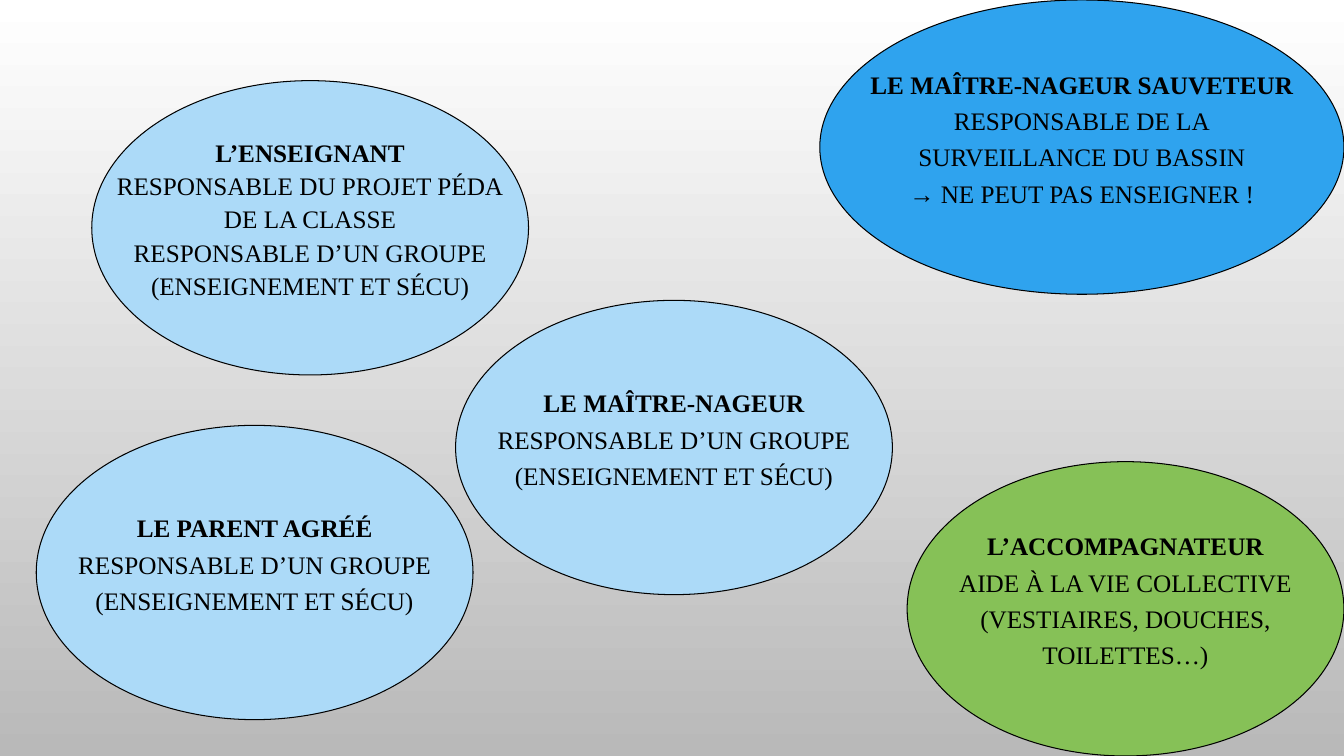
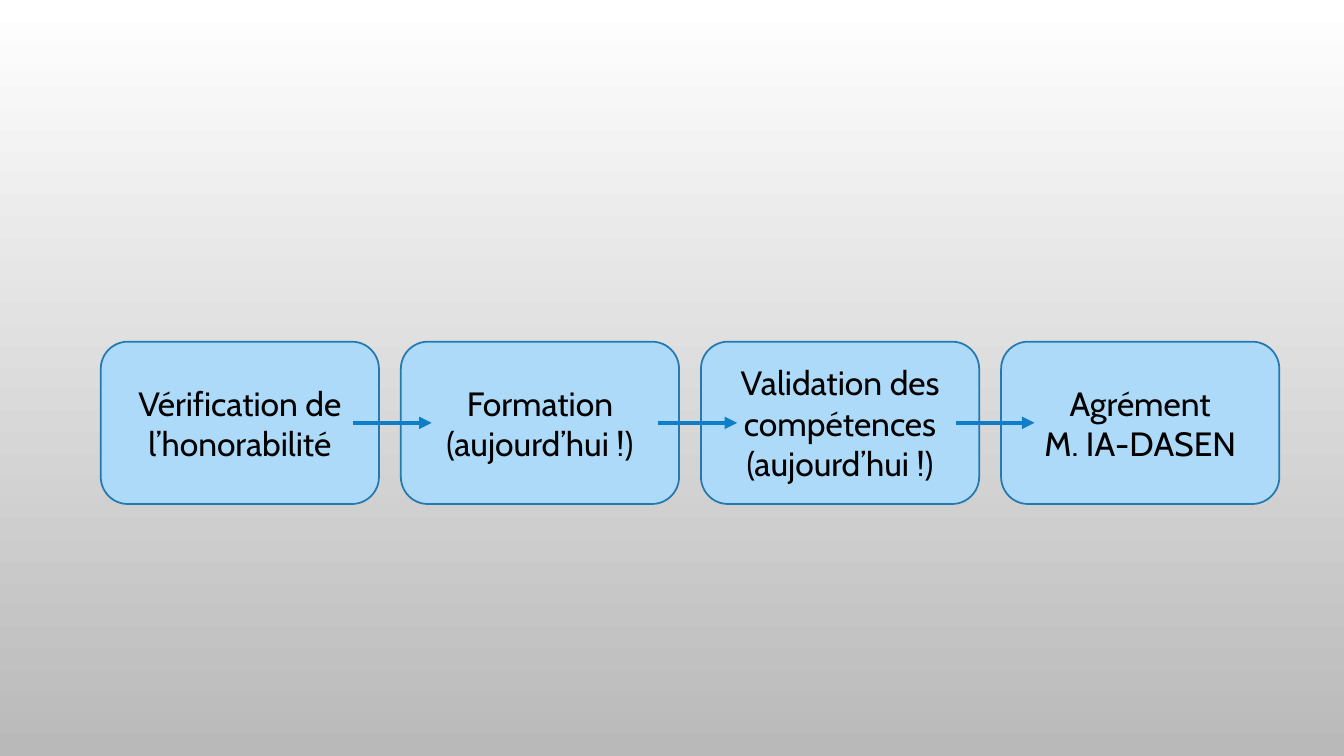
from dataclasses import dataclass

from lxml import etree
from pptx import Presentation
from pptx.dml.color import RGBColor
from pptx.enum.shapes import MSO_CONNECTOR, MSO_SHAPE
from pptx.enum.text import MSO_ANCHOR, PP_ALIGN
from pptx.oxml.ns import qn
from pptx.util import Inches, Pt

OVAL = MSO_SHAPE.OVAL
ROUND = MSO_SHAPE.ROUNDED_RECTANGLE
LINE = MSO_CONNECTOR.STRAIGHT
CENTER = PP_ALIGN.CENTER
MIDDLE = MSO_ANCHOR.MIDDLE

WIDE, HIGH = Inches(13.333), Inches(7.5)
BLACK, WHITE, GREY = "000000", "FFFFFF", "B9B9B9"
PALE, BLUE, GREEN = "ACDAF8", "2FA3EE", "86C157"
EDGE, ARROW = "2379B0", "107EC6"


@dataclass(frozen=True)
class Look:
    """Outline and text style of a kind of block."""
    kind: int
    edge: str
    line: float
    font: str
    size: int


@dataclass(frozen=True)
class Role:
    """One person's role; place and width are percent of the slide."""
    left: float
    top: float
    lines: tuple[str, ...]
    fill: str = PALE
    wide: float = 32.5
    space: float = 1.2


ROLE = Look(OVAL, BLACK, 0.75, "Times New Roman", 18)
STEP = Look(ROUND, EDGE, 1.25, "Cabin", 24)

GROUP = "RESPONSABLE D’UN GROUPE"
SAFE = "(ENSEIGNEMENT ET SÉCU)"
ROLES = (
    Role(33.9, 39.73, ("LE MAÎTRE-NAGEUR", GROUP, SAFE)),
    Role(2.7, 56.27, ("LE PARENT AGRÉÉ", GROUP, SAFE)),
    Role(61, 0, ("LE MAÎTRE-NAGEUR SAUVETEUR", "RESPONSABLE DE LA",
                 "SURVEILLANCE DU BASSIN", "→ NE PEUT PAS ENSEIGNER !"),
         BLUE, 39),
    Role(67.5, 61.07, ("L’ACCOMPAGNATEUR", "AIDE À LA VIE COLLECTIVE",
                       "(VESTIAIRES, DOUCHES,", "TOILETTES…)"), GREEN),
    Role(6.83, 10.67, ("L’ENSEIGNANT", "RESPONSABLE DU PROJET PÉDA",
                       "DE LA CLASSE", GROUP, SAFE), space=1.1),
)
STEPS = (
    ("Vérification de l’honorabilité",),
    ("Formation (aujourd’hui !)",),
    ("Validation des compétences (aujourd’hui !)",),
    ("Agrément", "M. IA-DASEN"),
)
STARTS = (26.25, 48.98, 71.1)
REACH = 5.87
TALL = 38.93
FIRST, PITCH = 7.5, 22.33
BOX_TOP, BOX_WIDE, BOX_TALL = 45.2, 20.7, 21.47


def color(code: str) -> RGBColor:
    """Turn a hex string into a colour."""
    return RGBColor.from_string(code)


def across(share: float) -> int:
    """Turn a percentage of the slide's width into a length."""
    return round(WIDE * share / 100)


def down(share: float) -> int:
    """Turn a percentage of the slide's height into a length."""
    return round(HIGH * share / 100)


def block(slide, look: Look, left: float, top: float, wide: float,
          tall: float, fill: str, lines: tuple[str, ...]):
    """Draw a filled shape with centred text and return its text frame."""
    shape = slide.shapes.add_shape(look.kind, across(left), down(top),
                                   across(wide), down(tall))
    shape.shadow.inherit = False
    shape.fill.solid()
    shape.fill.fore_color.rgb = color(fill)
    shape.line.color.rgb = color(look.edge)
    shape.line.width = Pt(look.line)
    frame = shape.text_frame
    frame.vertical_anchor = MIDDLE
    frame.text = "\n".join(lines)
    for para in frame.paragraphs:
        para.alignment = CENTER
        para.font.name = look.font
        para.font.size = Pt(look.size)
        para.font.color.rgb = color(BLACK)
    return frame


def role(slide, item: Role) -> None:
    """Draw a role as an ellipse with a bold heading."""
    frame = block(slide, ROLE, item.left, item.top, item.wide, TALL,
                  item.fill, item.lines)
    frame.word_wrap = False
    frame.margin_bottom = Inches(0.05 + 0.19 * item.space)
    for para in frame.paragraphs:
        para.line_spacing = item.space
    frame.paragraphs[0].font.bold = True


def arrow(slide, left: float) -> None:
    """Draw an arrow across the gap between two steps."""
    mid = down(BOX_TOP + BOX_TALL / 2)
    line = slide.shapes.add_connector(LINE, across(left), mid,
                                      across(left + REACH), mid)
    line.line.color.rgb = color(ARROW)
    line.line.width = Pt(3)
    etree.SubElement(line.line._get_or_add_ln(), qn("a:tailEnd"),
                     type="triangle")
    etree.SubElement(line._element.spPr, qn("a:effectLst"))


def shade(master) -> None:
    """Give all slides a white to grey background."""
    fill = master.background.fill
    fill.gradient()
    fill.gradient_angle = 270
    for stop, code, place in zip(fill.gradient_stops, (WHITE, GREY), (0, 1)):
        stop.color.rgb = color(code)
        stop.position = place


def main() -> None:
    """Build and save both slides."""
    deck = Presentation()
    deck.slide_width, deck.slide_height = WIDE, HIGH
    shade(deck.slide_master)
    blank = deck.slide_layouts[6]

    people = deck.slides.add_slide(blank)
    for item in ROLES:
        role(people, item)

    path = deck.slides.add_slide(blank)
    for col, lines in enumerate(STEPS):
        block(path, STEP, FIRST + col * PITCH, BOX_TOP, BOX_WIDE, BOX_TALL,
              PALE, lines)
    for left in STARTS:
        arrow(path, left)

    deck.save("out.pptx")


if __name__ == "__main__":
    main()
